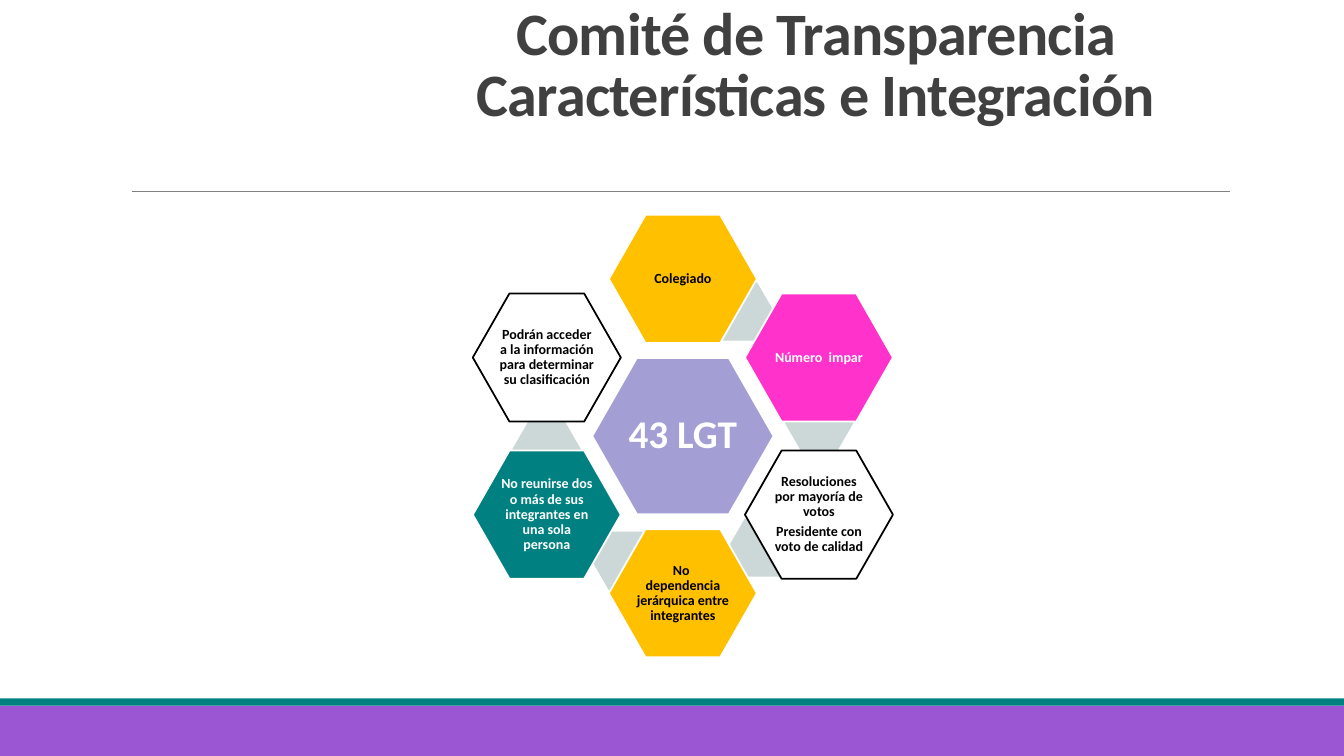
from dataclasses import dataclass
from math import cos, radians, sin

from lxml import etree
from pptx import Presentation
from pptx.dml.color import RGBColor
from pptx.enum.shapes import MSO_CONNECTOR, MSO_SHAPE
from pptx.enum.text import MSO_ANCHOR, MSO_AUTO_SIZE, PP_ALIGN
from pptx.oxml.ns import qn
from pptx.util import Cm, Pt

HEX, RECT = MSO_SHAPE.HEXAGON, MSO_SHAPE.RECTANGLE
LINE = MSO_CONNECTOR.STRAIGHT
MIDDLE, BOTTOM = MSO_ANCHOR.MIDDLE, MSO_ANCHOR.BOTTOM
CENTER = PP_ALIGN.CENTER
NO_FIT = MSO_AUTO_SIZE.NONE

WHITE = RGBColor(0xFF, 0xFF, 0xFF)
BLACK = RGBColor(0x00, 0x00, 0x00)
DARK = RGBColor(0x40, 0x40, 0x40)
GRAY = RGBColor(0x80, 0x80, 0x80)
PALE = RGBColor(0xCC, 0xD8, 0xD8)
TEAL = RGBColor(0x00, 0x80, 0x80)
PURPLE = RGBColor(0x9B, 0x57, 0xD3)
LILAC = RGBColor(0xA3, 0x9E, 0xD4)
GOLD = RGBColor(0xFF, 0xC0, 0x00)
PINK = RGBColor(0xFF, 0x33, 0xCC)

FONT = "Calibri"
WIDE, HIGH = 33.87, 19.05
MID_X, MID_Y = 17.21, 10.99  # centre of the ring, cm
RING, LINK_RING = 3.96, 3.45  # radii, cm
STEP, LINK_TURN = 60, 24.5  # degrees


@dataclass
class Cell:
    """A hexagon with its text."""
    lines: list[str]
    fill: RGBColor
    edge: RGBColor = WHITE
    ink: RGBColor = BLACK
    wide: float = 3.73
    high: float = 3.23
    size: int = 10
    inset: float = 0.03


@dataclass
class Band:
    """A bar across the foot of the slide."""
    top: float
    high: float
    fill: RGBColor


CORE = Cell(["43 LGT"], LILAC, ink=WHITE, wide=4.57, high=3.94, size=28, inset=0.1)
CELLS = [  # clockwise from the top
    Cell(["Colegiado"], GOLD),
    Cell(["Número  impar"], PINK, ink=WHITE),
    Cell(["Resoluciones por mayoría de votos", "Presidente con voto de calidad"],
         WHITE, edge=BLACK),
    Cell(["No  dependencia jerárquica entre integrantes"], GOLD),
    Cell(["No reunirse dos o más de sus integrantes en una sola persona"],
         TEAL, ink=WHITE),
    Cell(["Podrán acceder a la información para determinar su clasificación"],
         WHITE, edge=BLACK),
]
BANDS = [Band(17.78, 1.27, PURPLE), Band(17.6, 0.18, TEAL)]


def polar(turn: float, far: float) -> tuple[float, float]:
    """Point at a clockwise angle from the top of the ring."""
    angle = radians(turn)
    return MID_X + far * sin(angle), MID_Y - far * cos(angle)


def add_block(slide, kind, left: float, top: float, wide: float, high: float,
              fill: RGBColor):
    block = slide.shapes.add_shape(kind, Cm(left), Cm(top), Cm(wide), Cm(high))
    block.shadow.inherit = False
    block.fill.solid()
    block.fill.fore_color.rgb = fill
    block.line.fill.background()
    return block


def add_hex(slide, x: float, y: float, wide: float, high: float,
            fill: RGBColor, adj: float):
    block = add_block(slide, HEX, x - wide / 2, y - high / 2, wide, high, fill)
    block.adjustments[0] = adj
    return block


def style(para, size: int, ink: RGBColor, space: float) -> None:
    para.alignment = CENTER
    para.line_spacing = space
    font = para.font
    font.name, font.size, font.bold = FONT, Pt(size), True
    font.color.rgb = ink


def add_cell(slide, cell: Cell, x: float, y: float) -> None:
    block = add_hex(slide, x, y, cell.wide, cell.high, cell.fill, 0.286)
    block.line.color.rgb = cell.edge
    block.line.width = Pt(1.25)
    frame = block.text_frame
    frame.word_wrap = True
    frame.vertical_anchor = MIDDLE
    frame.margin_left = frame.margin_right = Cm(cell.inset)
    frame.margin_top = frame.margin_bottom = Cm(cell.inset)
    frame.text = "\n".join(cell.lines)
    for para in frame.paragraphs:
        style(para, cell.size, cell.ink, 0.9)
        para.space_after = Pt(0.35 * cell.size)


def add_title(slide) -> None:
    title = slide.shapes.title
    title.left, title.top = Cm(7.26), Cm(1.22)
    title.width, title.height = Cm(26.61), Cm(2.16)
    frame = title.text_frame
    frame.word_wrap = True
    frame.auto_size = NO_FIT
    frame.vertical_anchor = BOTTOM
    para = frame.paragraphs[0]
    para.text = "Comité de Transparencia\vCaracterísticas e Integración"
    style(para, 43, DARK, 0.85)
    # Tighter letter spacing
    para._p.get_or_add_pPr().find(qn("a:defRPr")).set("spc", "-50")


def add_rule(slide) -> None:
    rule = slide.shapes.add_connector(LINE, Cm(3.33), Cm(4.82), Cm(31), Cm(4.82))
    rule.line.color.rgb = GRAY
    rule.line.width = Pt(0.5)
    etree.SubElement(rule._element.spPr, qn("a:effectLst"))


def main() -> None:
    deck = Presentation()
    deck.slide_width, deck.slide_height = Cm(WIDE), Cm(HIGH)
    slide = deck.slides.add_slide(deck.slide_layouts[5])

    # Frame of the slide
    for band in BANDS:
        add_block(slide, RECT, 0, band.top, WIDE, band.high, band.fill)
    add_rule(slide)
    add_title(slide)

    # Ring of hexagons, with a pale link before each but the first and last
    add_cell(slide, CORE, MID_X, MID_Y)
    for i, cell in enumerate(CELLS):
        if i < len(CELLS) - 1:
            x, y = polar(LINK_TURN + STEP * i, LINK_RING)
            add_hex(slide, x, y, 1.73, 1.47, PALE, 0.289)
        add_cell(slide, cell, *polar(STEP * i, RING))

    deck.save("out.pptx")


if __name__ == "__main__":
    main()
